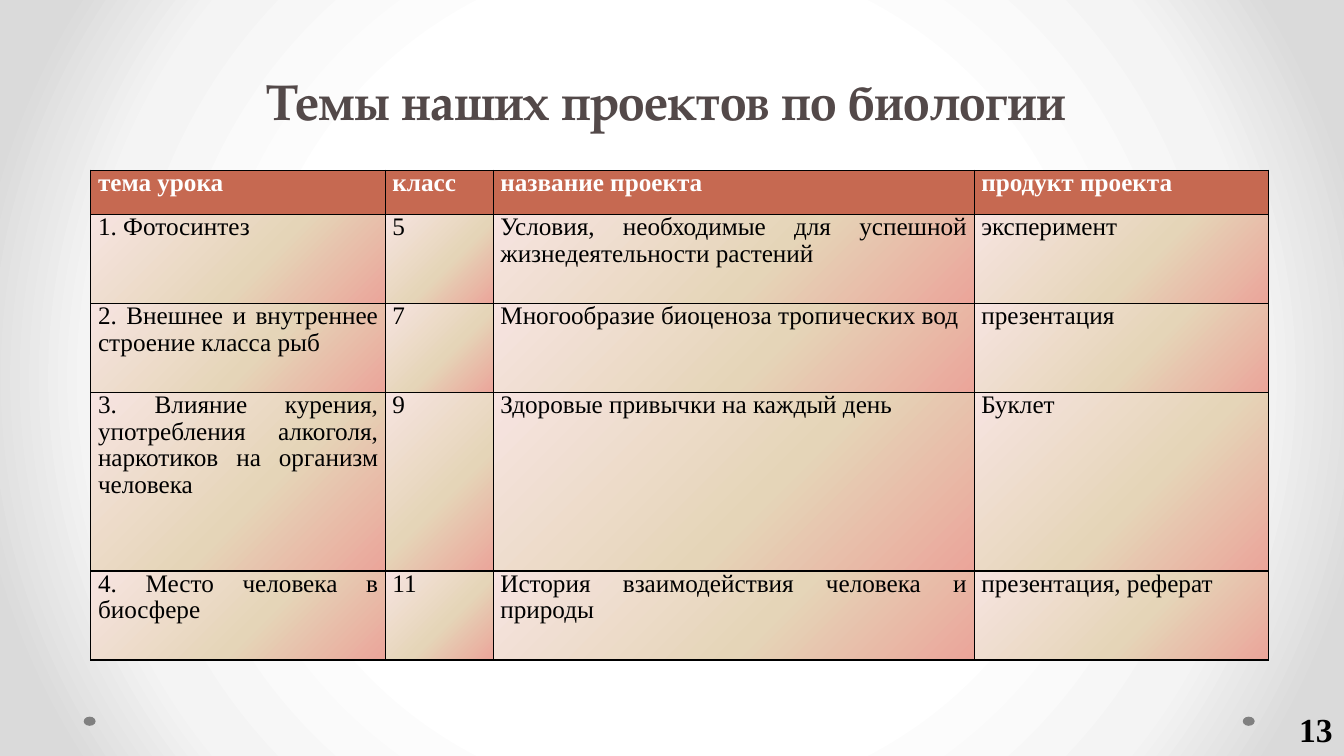
from lxml import etree
from pptx import Presentation
from pptx.dml.color import RGBColor
from pptx.enum import shapes, text
from pptx.oxml import ns
from pptx.util import Cm, Pt

BACKDROP = [(50, "FFFFFF"), (76, "F4F4F4"), (92, "DADADA")]
CELL_GRADIENT = [(0, "EBA59A"), (43, "E5D5B8"), (100, "F7E4E1")]
COLUMNS = [7.42, 2.72, 12.12, 7.42]
ROWS = [1.12, 2.24, 2.24, 4.5, 2.24]
PROJECTS = [
    ("тема урока", "класс", "название проекта", "продукт проекта"),
    ("1. Фотосинтез", "5",
     "Условия, необходимые для успешной жизнедеятельности растений", "эксперимент"),
    ("2. Внешнее и внутреннее строение класса рыб", "7",
     "Многообразие биоценоза тропических вод", "презентация"),
    ("3. Влияние курения, употребления алкоголя, наркотиков на организм человека", "9",
     "Здоровые привычки на каждый день", "Буклет"),
    ("4. Место человека в биосфере", "11",
     "История взаимодействия человека и природы", "презентация, реферат"),
]


def rgb(value):
    return RGBColor.from_string(value)


def add_xml(parent, tag, **attributes):
    return etree.SubElement(parent, ns.qn(tag), attributes)


def add_color(parent, value):
    add_xml(parent, "a:srgbClr", val=value)


def add_gradient(parent, stops, **focus):
    """Append a circular gradient; focus gives its inner rectangle in percent."""
    grad = add_xml(parent, "a:gradFill", rotWithShape="1")
    stop_list = add_xml(grad, "a:gsLst")
    for position, color in stops:
        add_color(add_xml(stop_list, "a:gs", pos=str(position * 1000)), color)
    circle = add_xml(grad, "a:path", path="circle")
    add_xml(circle, "a:fillToRect", **{side: str(n * 1000) for side, n in focus.items()})
    return grad


class ProjectSlide:
    body_font = "Times New Roman"
    title_font = "TeX Gyre Pagella"
    title_color = "534949"
    header_color = "C66951"
    dot_color = "808080"

    def __init__(self, prs):
        self.s = prs.slides.add_slide(prs.slide_layouts[5])

    def style(self, p, font, size, color, bold):
        p.font.name, p.font.size, p.font.bold = font, Pt(size), bold
        p.font.color.rgb = rgb(color)

    def background(self):
        fill = self.s.background.fill
        fill.solid()
        props = self.s.element.cSld.bg.bgPr
        props.replace(props[0], add_gradient(props, BACKDROP, l=50, t=50, r=50, b=50))

    def dot(self, left):
        sp = self.s.shapes.add_shape(shapes.MSO_SHAPE.OVAL, Cm(left), Cm(18.06), Cm(0.3), Cm(0.23))
        sp.shadow.inherit = False
        sp.fill.solid()
        sp.fill.fore_color.rgb = rgb(self.dot_color)
        sp.line.fill.background()

    def title(self, words):
        sp = self.s.shapes.title
        sp.left, sp.top, sp.width, sp.height = Cm(1.55), Cm(-1.02), Cm(30.48), Cm(4.45)
        tf = sp.text_frame
        tf.text = words
        tf.vertical_anchor = text.MSO_ANCHOR.BOTTOM
        tf.auto_size = text.MSO_AUTO_SIZE.NONE
        p = tf.paragraphs[0]
        p.alignment = text.PP_ALIGN.CENTER
        self.style(p, self.title_font, 36, self.title_color, True)

    def table(self, left, top):
        table = self.s.shapes.add_table(len(ROWS), len(COLUMNS), Cm(left), Cm(top),
                                        Cm(sum(COLUMNS)), Cm(sum(ROWS))).table
        table.horz_banding = False
        for column, width in zip(table.columns, COLUMNS):
            column.width = Cm(width)
        for i, (row, height, words) in enumerate(zip(table.rows, ROWS, PROJECTS)):
            row.height = Cm(height)
            for cell, value in zip(row.cells, words):
                self.cell(cell, value, header=i == 0)

    def cell(self, cell, value, header):
        cell.text = value
        cell.margin_left = cell.margin_right = Cm(0.18)
        cell.margin_top = cell.margin_bottom = 0
        p = cell.text_frame.paragraphs[0]
        p.alignment = text.PP_ALIGN.JUSTIFY
        p.line_spacing = 0.95
        self.style(p, self.body_font, 18, "FFFFFF" if header else "000000", header)
        props = cell._tc.get_or_add_tcPr()
        for side in "LRTB":
            border = add_xml(props, f"a:ln{side}", w=str(Pt(1)))
            add_color(add_xml(border, "a:solidFill"), "000000")
        if header:
            cell.fill.solid()
            cell.fill.fore_color.rgb = rgb(self.header_color)
        else:
            add_gradient(props, CELL_GRADIENT, l=100, t=100)

    def page_number(self, number):
        sp = self.s.shapes.add_textbox(Cm(32.49), Cm(17.73), Cm(1.37), Cm(1.27))
        tf = sp.text_frame
        tf.text = number
        tf.word_wrap = False
        tf.auto_size = text.MSO_AUTO_SIZE.SHAPE_TO_FIT_TEXT
        self.style(tf.paragraphs[0], self.body_font, 24, "000000", True)


def main():
    prs = Presentation()
    prs.slide_width, prs.slide_height = Cm(33.87), Cm(19.05)
    slide = ProjectSlide(prs)
    slide.background()
    for left in (31.32, 2.11):
        slide.dot(left)
    slide.title("Темы наших проектов по биологии")
    slide.table(2.29, 4.29)
    slide.page_number("13")
    prs.save("out.pptx")


if __name__ == "__main__":
    main()
